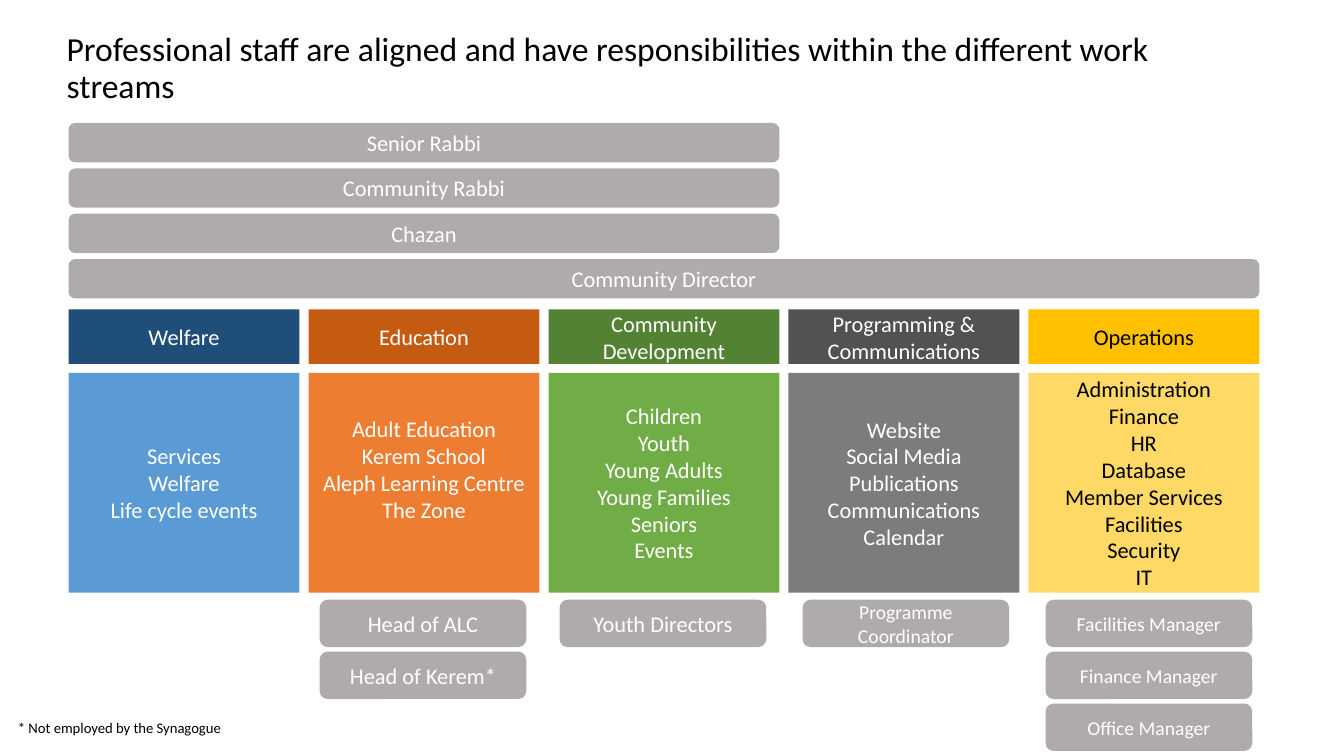
"""Staff chart: professional staff set against five work streams."""
import pptx
import pptx.util
import pptx.dml.color
import pptx.enum.shapes
import pptx.enum.text

Inches = pptx.util.Inches
Pt = pptx.util.Pt
RGB = pptx.dml.color.RGBColor.from_string
SHAPE = pptx.enum.shapes.MSO_SHAPE
ALIGN = pptx.enum.text.PP_ALIGN
ANCHOR = pptx.enum.text.MSO_ANCHOR
AUTO = pptx.enum.text.MSO_AUTO_SIZE

THEME = {
    "font": "Calibri", "light": "FFFFFF", "dark": "000000", "staff": "AFABAB",
    "title": 24, "body": 16, "small": 14, "note": 10.5,
}
LEFT, COL, GAP = 0.68, 2.38, 0.09
BAR_TOP, BAR_ROW, BAR_H = 1.22, 0.45, 0.39
HEAD_TOP, HEAD_H = 3.07, 0.54
BODY_TOP, BODY_H = 3.7, 2.18
STAFF_TOP, STAFF_ROW, STAFF_W, STAFF_H = 5.95, 0.515, 2.05, 0.47
LINE = 0.27

BARS = [("Senior Rabbi", 3), ("Community Rabbi", 3), ("Chazan", 3), ("Community Director", 5)]
STREAMS = [
    ("Welfare", "1F4E79", "5B9BD5", "light",
     ["Services", "Welfare", "Life cycle events"]),
    ("Education", "C55A11", "ED7D31", "light",
     ["Adult Education", "Kerem School", "Aleph Learning Centre", "The Zone"]),
    ("Community Development", "548235", "70AD47", "light",
     ["Children", "Youth", "Young Adults", "Young Families", "Seniors", "Events"]),
    ("Programming & Communications", "525252", "7C7C7C", "light",
     ["Website", "Social Media", "Publications", "Communications", "Calendar"]),
    ("Operations", "FFC000", "FFD966", "dark",
     ["Administration", "Finance", "HR", "Database", "Member Services",
      "Facilities", "Security", "IT"]),
]
STAFF = [
    (3.17, "body", ["Head of ALC", "Head of Kerem*"]),
    (5.55, "body", ["Youth Directors"]),
    (7.96, "small", ["Programme Coordinator"]),
    (10.37, "small", ["Facilities Manager", "Finance Manager", "Office Manager"]),
]


def style(tf, size, color, align):
    for p in tf.paragraphs:
        p.alignment = align
        for r in p.runs:
            r.font.name = THEME["font"]
            r.font.size = Pt(THEME[size])
            r.font.color.rgb = RGB(THEME[color])


def add_box(kind, x, y, w, h, fill, text, size="body", color="light"):
    sp = s.shapes.add_shape(kind, Inches(x), Inches(y), Inches(w), Inches(h))
    sp.shadow.inherit = False
    sp.fill.solid()
    sp.fill.fore_color.rgb = RGB(fill)
    sp.line.fill.background()
    tf = sp.text_frame
    tf.word_wrap = True
    tf.vertical_anchor = ANCHOR.MIDDLE
    tf.text = text
    style(tf, size, color, ALIGN.CENTER)
    return sp


prs = pptx.Presentation()
prs.slide_width, prs.slide_height = Inches(13.33), Inches(7.5)
s = prs.slides.add_slide(prs.slide_layouts[5])

title = s.shapes.title
title.left, title.top, title.width, title.height = map(Inches, (0.56, 0.4, 11.5, 0.57))
tf = title.text_frame
tf.text = "Professional staff are aligned and have responsibilities within the different work streams"
tf.auto_size = AUTO.NONE
tf.word_wrap = True
tf.vertical_anchor = ANCHOR.MIDDLE
tf.paragraphs[0].line_spacing = 0.9
style(tf, "title", "dark", ALIGN.LEFT)

for row, (name, span) in enumerate(BARS):
    add_box(SHAPE.ROUNDED_RECTANGLE, LEFT, BAR_TOP + row * BAR_ROW,
            span * COL - GAP, BAR_H, THEME["staff"], name)

for col, (name, head_fill, body_fill, color, topics) in enumerate(STREAMS):
    x = LEFT + col * COL
    add_box(SHAPE.RECTANGLE, x, HEAD_TOP, COL - GAP, HEAD_H, head_fill, name, color=color)
    body = add_box(SHAPE.RECTANGLE, x, BODY_TOP, COL - GAP, BODY_H, body_fill,
                   "\n".join(topics), color=color)
    if name == "Education":
        body.text_frame.margin_bottom = Inches(0.05 + LINE)

for x, size, names in STAFF:
    for row, name in enumerate(names):
        add_box(SHAPE.ROUNDED_RECTANGLE, x, STAFF_TOP + row * STAFF_ROW,
                STAFF_W, STAFF_H, THEME["staff"], name, size)

note = s.shapes.add_textbox(Inches(0.08), Inches(7.08), Inches(2.24), Inches(0.28))
tf = note.text_frame
tf.text = "* Not employed by the Synagogue"
tf.word_wrap = False
tf.auto_size = AUTO.SHAPE_TO_FIT_TEXT
style(tf, "note", "dark", ALIGN.LEFT)

prs.save("out.pptx")
